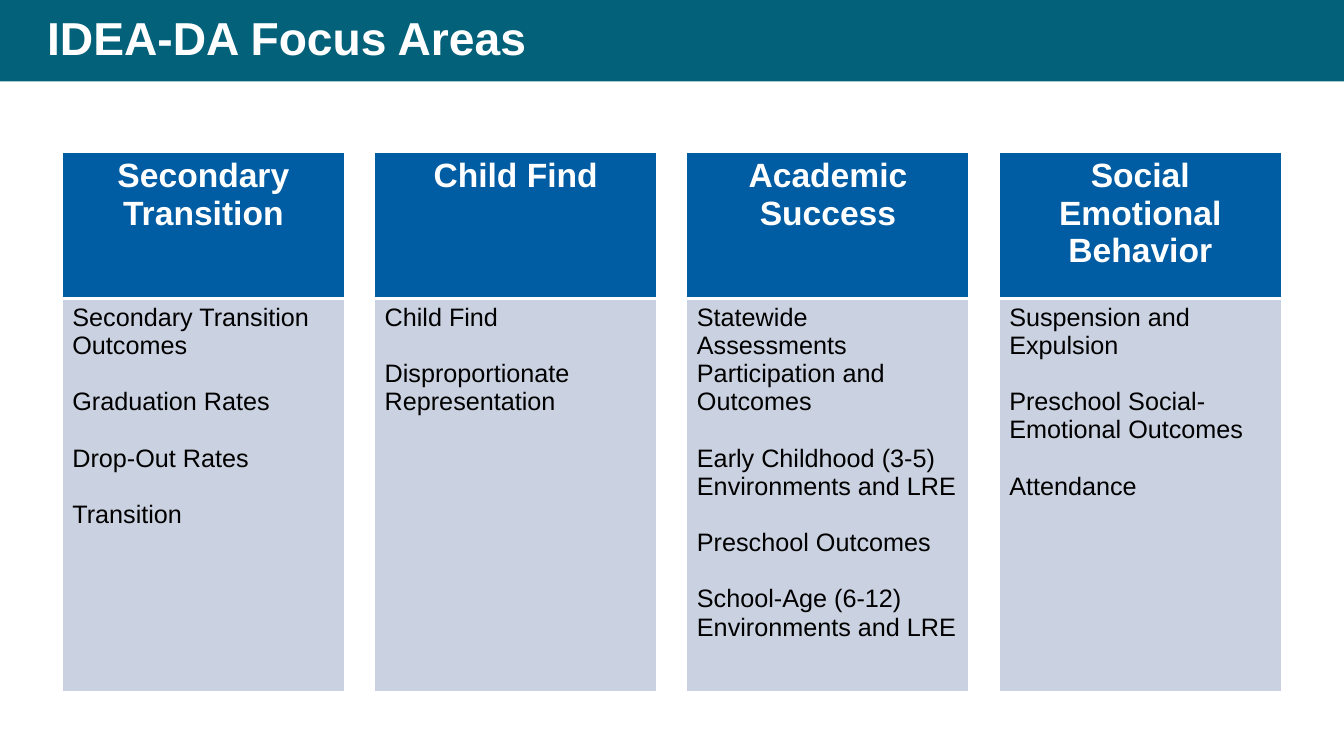
from dataclasses import dataclass

from lxml import etree
from pptx import Presentation
from pptx import util as u
from pptx.dml.color import RGBColor
from pptx.enum import shapes, text
from pptx.oxml.ns import qn

TEAL = RGBColor(0x03, 0x61, 0x7A)
BLUE = RGBColor(0x00, 0x5C, 0xA3)
PALE = RGBColor(0xCA, 0xD1, 0xE0)
WHITE = RGBColor(0xFF, 0xFF, 0xFF)
BLACK = RGBColor(0x00, 0x00, 0x00)

WIDTH, BAND = u.Cm(33.87), u.Cm(2.05)
WIDE, GAP = u.Cm(7.11), u.Cm(0.76)
HEAD, BODY = u.Cm(3.68), u.Cm(9.91)


@dataclass(frozen=True)
class Area:
    name: str
    items: tuple[str, ...]


@dataclass(frozen=True)
class Style:
    size: int
    color: RGBColor
    bold: bool = False
    align: text.PP_ALIGN = text.PP_ALIGN.LEFT
    space: int = 0
    lead: float = 1.0


TITLE = Style(33, WHITE, bold=True, lead=0.9)
HEADER = Style(24, WHITE, bold=True, align=text.PP_ALIGN.CENTER)
ITEM = Style(18, BLACK, space=20)

AREAS = (
    Area("Secondary Transition", (
        "Secondary Transition Outcomes", "Graduation Rates",
        "Drop-Out Rates", "Transition")),
    Area("Child Find", ("Child Find", "Disproportionate Representation")),
    Area("Academic Success", (
        "Statewide Assessments Participation and Outcomes",
        "Early Childhood (3-5) Environments and LRE",
        "Preschool Outcomes",
        "School-Age (6-12) Environments and LRE")),
    Area("Social Emotional Behavior", (
        "Suspension and Expulsion", "Preschool Social-Emotional Outcomes",
        "Attendance")),
)


def write(frame, lines: tuple[str, ...], style: Style) -> None:
    """Write one paragraph per line, spaced apart after the first."""
    for i, line in enumerate(lines):
        para = frame.add_paragraph() if i else frame.paragraphs[0]
        para.alignment = style.align
        para.line_spacing = style.lead
        para.space_before = u.Pt(style.space if i else 0)
        run = para.add_run()
        run.text = line
        font = run.font
        font.name, font.size, font.bold = "Arial", u.Pt(style.size), style.bold
        font.color.rgb = style.color


def edge(cell, side: str, points: int) -> None:
    """Add a white border to one side of a cell."""
    props = cell._tc.get_or_add_tcPr()
    line = etree.SubElement(props, qn(f"a:ln{side}"), w=str(u.Pt(points)))
    fill = etree.SubElement(line, qn("a:solidFill"))
    etree.SubElement(fill, qn("a:srgbClr"), val=str(WHITE))


def paint(cell, color: RGBColor, top: int, low: int) -> None:
    """Set a cell's borders and then its fill."""
    for side, points in (("L", 1), ("R", 1), ("T", top), ("B", low)):
        edge(cell, side, points)
    cell.fill.solid()
    cell.fill.fore_color.rgb = color


def add_title(slide, label: str) -> None:
    band = slide.shapes.add_shape(
        shapes.MSO_SHAPE.RECTANGLE, 0, 0, WIDTH, BAND)
    band.shadow.inherit = False
    band.fill.solid()
    band.fill.fore_color.rgb = TEAL
    band.line.fill.background()
    box = slide.shapes.add_textbox(u.Cm(0.94), 0, u.Cm(31.29), BAND)
    frame = box.text_frame
    frame.word_wrap = True
    frame.vertical_anchor = text.MSO_ANCHOR.MIDDLE
    write(frame, (label,), TITLE)


def add_areas(slide, areas: tuple[Area, ...]) -> None:
    """Draw the areas as table columns with a narrow gap between them."""
    count = 2 * len(areas) - 1
    span = len(areas) * WIDE + (len(areas) - 1) * GAP
    grid = slide.shapes.add_table(
        2, count, u.Cm(1.57), u.Cm(3.84), span, HEAD + BODY).table
    grid.rows[0].height, grid.rows[1].height = HEAD, BODY
    for col in range(count):
        gap = col % 2 == 1
        grid.columns[col].width = GAP if gap else WIDE
        top, low = grid.cell(0, col), grid.cell(1, col)
        paint(top, WHITE if gap else BLUE, 1, 3)
        paint(low, WHITE if gap else PALE, 3, 1)
        if not gap:
            area = areas[col // 2]
            write(top.text_frame, (area.name,), HEADER)
            write(low.text_frame, area.items, ITEM)


def main() -> None:
    deck = Presentation()
    deck.slide_width, deck.slide_height = WIDTH, u.Cm(19.05)
    slide = deck.slides.add_slide(deck.slide_layouts[6])
    add_title(slide, "IDEA-DA Focus Areas")
    add_areas(slide, AREAS)
    deck.save("out.pptx")


if __name__ == "__main__":
    main()
